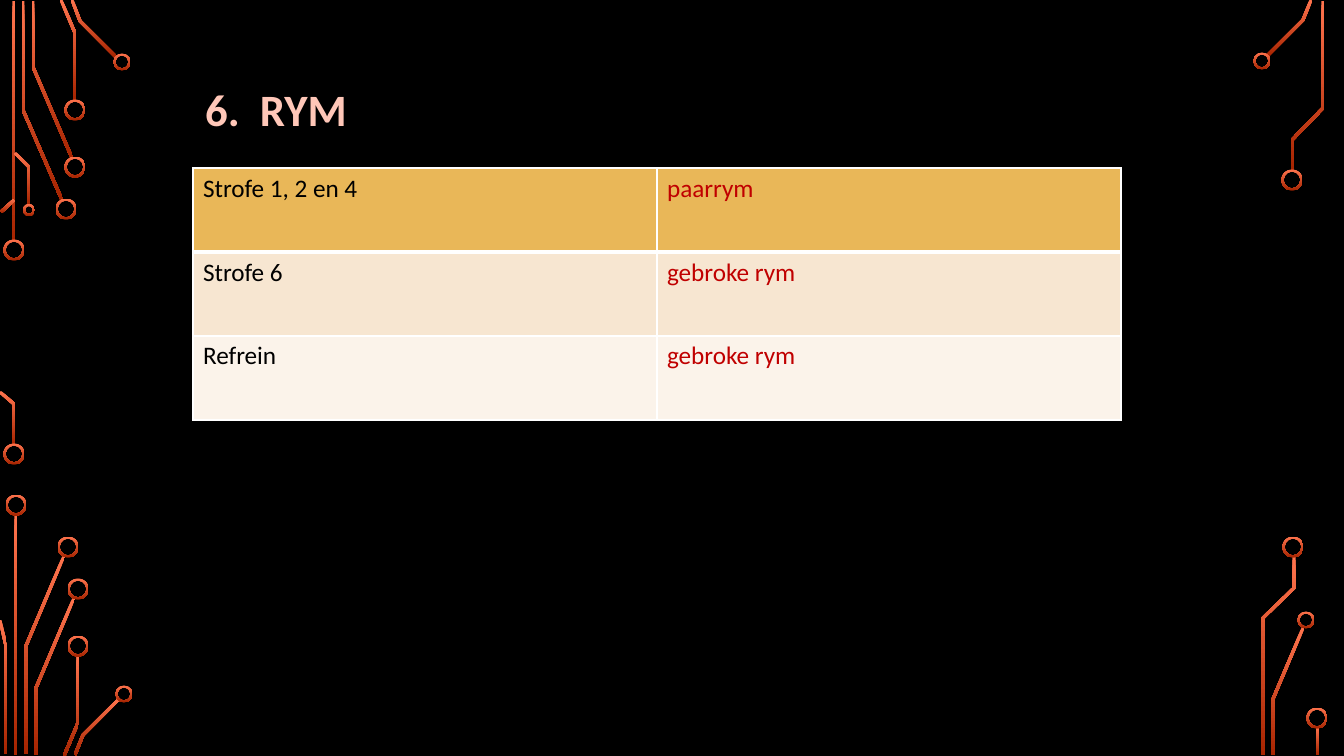
from math import hypot

from lxml.etree import SubElement
from pptx import Presentation
from pptx.dml.color import RGBColor
from pptx.enum.shapes import MSO_SHAPE
from pptx.enum.text import MSO_ANCHOR, MSO_AUTO_SIZE, PP_ALIGN
from pptx.oxml.ns import qn
from pptx.util import Emu, Pt

# Content
TITLE = "6.  RYM"
ROWS = [
    ("Strofe 1, 2 en 4", "paarrym"),
    ("Strofe 6", "gebroke rym"),
    ("Refrein", "gebroke rym"),
]
ROW_FILLS = ["E9B758", "F7E6D1", "FBF3EA"]
COLUMN_COLORS = ["000000", "C00000"]
FONT = "Calibri"

# Circuit traces as centre lines, in px
TRACES = [
    # top left
    [(14, 1), (14, 242)],
    [(23, 1), (23, 110), (62, 200)],
    [(33, 1), (33, 67), (72, 158)],
    [(61, 0), (75, 33), (75, 101)],
    [(72, 0), (80, 21), (116, 57)],
    [(1, 212), (14, 200)],
    [(0, 392), (14, 404), (14, 445)],
    [(15, 153), (29, 167), (29, 205)],
    # bottom left
    [(16, 514), (16, 755)],
    [(26, 754), (26, 646), (64, 556)],
    [(0, 620), (6, 646), (6, 754)],
    [(36, 755), (36, 688), (74, 598)],
    [(64, 756), (78, 723), (78, 655)],
    [(75, 755), (83, 735), (119, 699)],
    # right
    [(1267, 56), (1303, 20), (1311, 0)],
    [(1323, 1), (1323, 108), (1292, 140), (1292, 170)],
    [(1263, 755), (1263, 618), (1294, 588), (1294, 556)],
    [(1273, 755), (1273, 699), (1303, 628)],
    [(1318, 727), (1318, 755)],
]
# Ring centres by diameter, in px
RINGS = {
    21: [(14, 250), (14, 454), (66, 209), (75, 167), (75, 110), (16, 505),
         (68, 547), (78, 589), (78, 646), (1292, 180), (1293, 547), (1317, 718)],
    17: [(122, 62), (124, 694), (1262, 61), (1306, 620)],
    12: [(29, 210)],
}
TRACE_WIDTH, RING_BAND = 3, 2

# Layout in px
SLIDE_W, SLIDE_H = 1344, 756
TABLE_X, TABLE_Y, COL_W, ROW_H = 193, 168, 464, 84
TITLE_BOX = (195, 77, 664, 64)


def px(n):
    return Emu(round(n * 914400 / 100.8))


def rgb(color):
    return RGBColor.from_string(color)


def style_font(font, size, color, bold=False):
    font.name, font.size, font.bold = FONT, Pt(size), bold
    font.color.rgb = rgb(color)


def paint_copper(sp):
    sp.shadow.inherit = False
    sp.line.fill.background()
    sp.fill.gradient()
    sp.fill.gradient_angle = 270
    for stop, color in zip(sp.fill.gradient_stops, ("FF744E", "A62400")):
        stop.color.rgb = rgb(color)


def trace_side(points, offset):
    """Shift a centre line sideways, with mitred corners."""
    normals = []
    for (x1, y1), (x2, y2) in zip(points, points[1:]):
        length = hypot(x2 - x1, y2 - y1)
        normals.append(((y1 - y2) / length, (x2 - x1) / length))
    side = []
    for (x, y), (ax, ay), (bx, by) in zip(points, normals[:1] + normals,
                                          normals + normals[-1:]):
        k = offset / (1 + ax * bx + ay * by)
        side.append((px(x + k * (ax + bx)), px(y + k * (ay + by))))
    return side


def add_trace(shapes, points):
    half = TRACE_WIDTH / 2
    outline = trace_side(points, half) + trace_side(points, -half)[::-1]
    builder = shapes.build_freeform(*outline[0])
    builder.add_line_segments(outline[1:], close=True)
    paint_copper(builder.convert_to_shape())


def add_ring(shapes, cx, cy, d):
    sp = shapes.add_shape(MSO_SHAPE.DONUT, px(cx - d / 2), px(cy - d / 2), px(d), px(d))
    sp.adjustments[0] = RING_BAND / d
    paint_copper(sp)


def set_borders(cell, widths):
    tcPr = cell._tc.get_or_add_tcPr()
    for i, (side, width) in enumerate(widths.items()):
        ln = SubElement(tcPr, qn("a:ln" + side), w=str(Pt(width)))
        SubElement(SubElement(ln, qn("a:solidFill")), qn("a:srgbClr"), val="FFFFFF")
        tcPr.insert(i, ln)


def main():
    prs = Presentation()
    prs.slide_width, prs.slide_height = px(SLIDE_W), px(SLIDE_H)
    slide = prs.slides.add_slide(prs.slide_layouts[5])
    slide.background.fill.solid()
    slide.background.fill.fore_color.rgb = rgb("000000")
    shapes = slide.shapes

    # Circuit decoration
    for points in TRACES:
        add_trace(shapes, points)
    for d, centres in RINGS.items():
        for cx, cy in centres:
            add_ring(shapes, cx, cy, d)

    # Rhyme table
    table = shapes.add_table(len(ROWS), 2, px(TABLE_X), px(TABLE_Y),
                             px(2 * COL_W), px(len(ROWS) * ROW_H)).table
    for r, texts in enumerate(ROWS):
        table.rows[r].height = px(ROW_H)
        for c, text in enumerate(texts):
            cell = table.cell(r, c)
            cell.text_frame.text = text
            style_font(cell.text_frame.paragraphs[0].runs[0].font, 18, COLUMN_COLORS[c])
            cell.fill.solid()
            cell.fill.fore_color.rgb = rgb(ROW_FILLS[r])
            set_borders(cell, {"L": 1, "R": 1, "T": 3 if r == 1 else 1,
                               "B": 3 if r == 0 else 1})

    # Title
    title = shapes.title
    title.left, title.top, title.width, title.height = map(px, TITLE_BOX)
    tf = title.text_frame
    tf.text = TITLE
    tf.word_wrap = True
    tf.auto_size = MSO_AUTO_SIZE.SHAPE_TO_FIT_TEXT
    tf.vertical_anchor = MSO_ANCHOR.TOP
    p = tf.paragraphs[0]
    p.alignment = PP_ALIGN.LEFT
    style_font(p.runs[0].font, 32, "FFC7B8", bold=True)

    prs.save("out.pptx")


if __name__ == "__main__":
    main()
